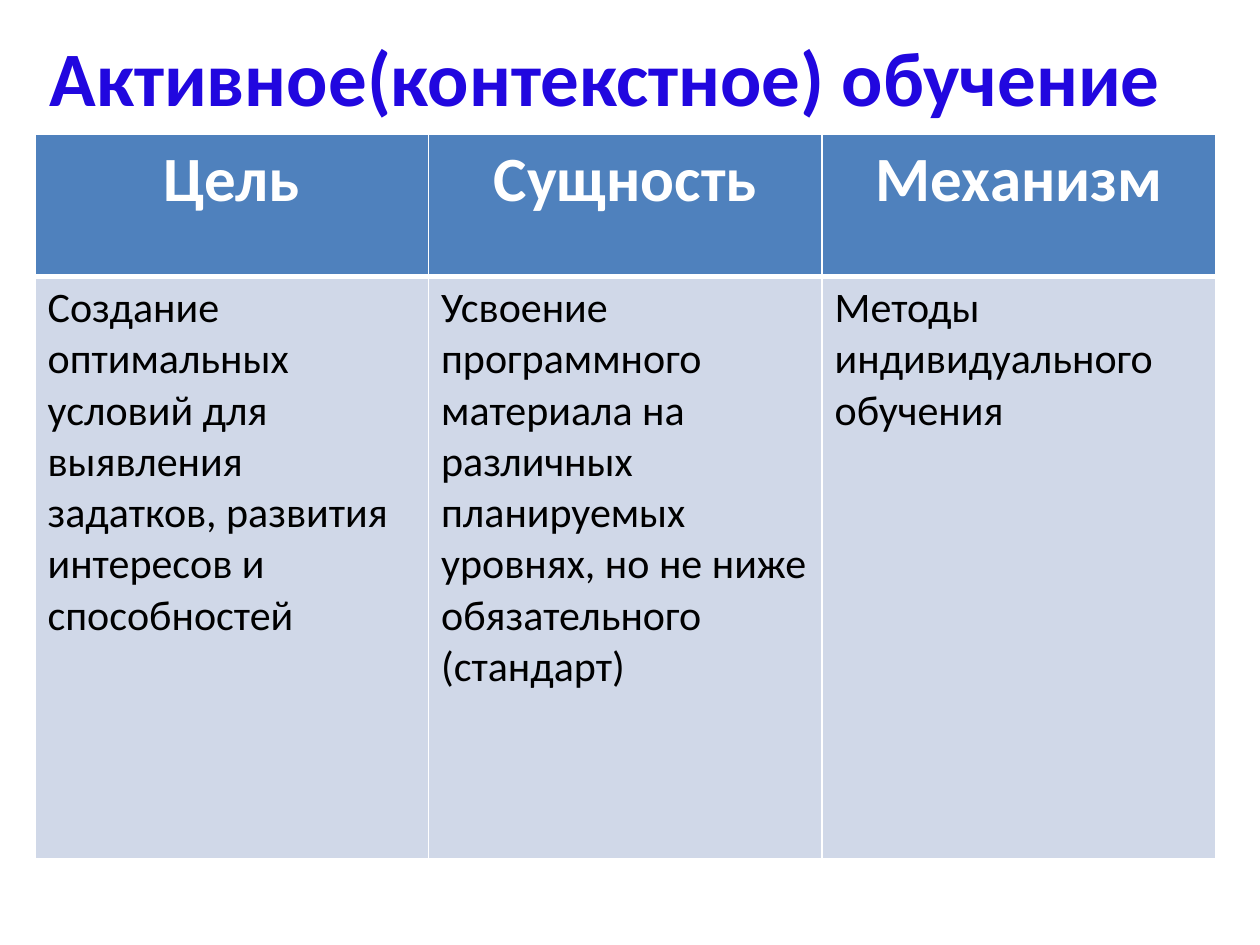
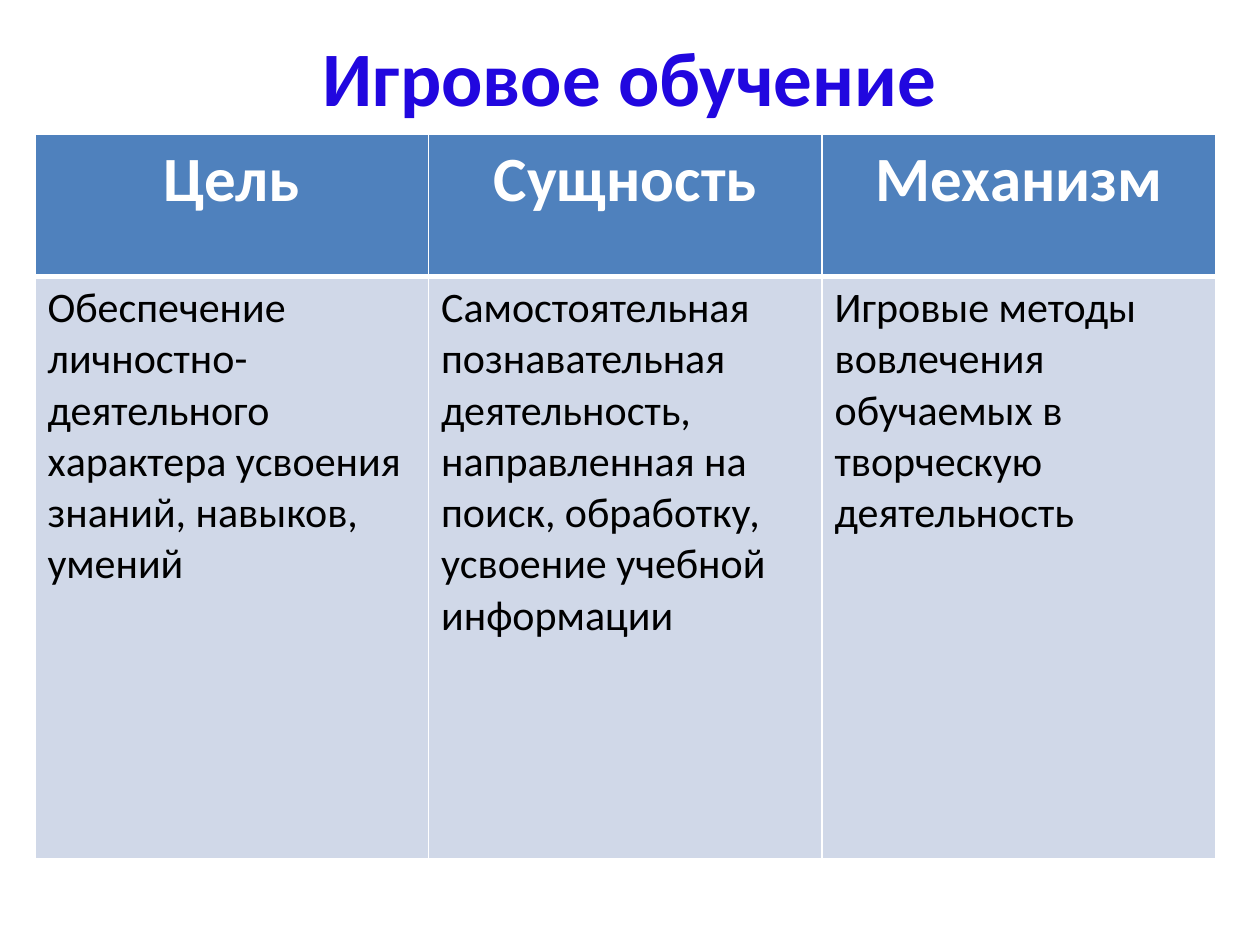
from dataclasses import dataclass

from lxml import etree
from pptx import Presentation
from pptx.dml.color import RGBColor
from pptx.enum.text import MSO_ANCHOR, PP_ALIGN
from pptx.oxml.ns import qn
from pptx.util import Pt

LEFT, CENTER = PP_ALIGN.LEFT, PP_ALIGN.CENTER
MIDDLE = MSO_ANCHOR.MIDDLE

# Content: title, left and width of the title box, body cells
HEADS = ["Цель", "Сущность", "Механизм"]
SLIDES = [
    ("Активное(контекстное) обучение", 8.5, 675, [
        "Создание оптимальных условий для выявления задатков, "
        "развития интересов и способностей",
        "Усвоение программного материала на различных планируемых "
        "уровнях, но не ниже обязательного (стандарт)",
        "Методы индивидуального обучения",
    ]),
    ("Игровое обучение", 36, 648, [
        "Обеспечение личностно-деятельного характера усвоения "
        "знаний, навыков, умений",
        "Самостоятельная познавательная деятельность, направленная "
        "на поиск, обработку, усвоение учебной информации",
        "Игровые методы вовлечения обучаемых в творческую деятельность",
    ]),
]


@dataclass(frozen=True)
class Theme:
    font: str = "Calibri"
    title: str = "2107DF"
    head: str = "4F81BD"
    body: str = "D0D8E8"
    white: str = "FFFFFF"
    black: str = "000000"
    title_size: int = 44
    head_size: int = 36
    body_size: int = 24
    thin: int = 1
    thick: int = 3


THEME = Theme()

# Layout in points
WIDE, HIGH = 720, 540
TITLE_TOP, TITLE_HIGH = 9.4, 67.5
GRID_LEFT, GRID_TOP = 20, 77
COL_WIDE = 224.9
ROW_HIGH = [81, 333]


def set_text(frame, text, size, color, bold, align):
    frame.text = text
    par = frame.paragraphs[0]
    par.alignment = align
    font = par.runs[0].font
    font.name, font.size, font.bold = THEME.font, Pt(size), bold
    font.color.rgb = RGBColor.from_string(color)


def set_edges(cell, top, bottom):
    props = cell._tc.get_or_add_tcPr()
    widths = {"a:lnL": THEME.thin, "a:lnR": THEME.thin,
              "a:lnT": top, "a:lnB": bottom}
    for tag, width in widths.items():
        line = etree.SubElement(props, qn(tag), w=str(Pt(width)))
        fill = etree.SubElement(line, qn("a:solidFill"))
        etree.SubElement(fill, qn("a:srgbClr"), val=THEME.white)


def add_title(slide, text, left, width):
    box = slide.shapes.add_textbox(
        Pt(left), Pt(TITLE_TOP), Pt(width), Pt(TITLE_HIGH))
    frame = box.text_frame
    frame.word_wrap = True
    frame.vertical_anchor = MIDDLE
    set_text(frame, text, THEME.title_size, THEME.title, True, CENTER)


def add_grid(slide, body):
    # Each row: texts, fill, type size, text colour, bold, align, edges
    rows = [
        (HEADS, THEME.head, THEME.head_size, THEME.white, True, CENTER,
         (THEME.thin, THEME.thick)),
        (body, THEME.body, THEME.body_size, THEME.black, False, LEFT,
         (THEME.thick, THEME.thin)),
    ]
    count = len(HEADS)
    table = slide.shapes.add_table(
        len(rows), count, Pt(GRID_LEFT), Pt(GRID_TOP),
        Pt(COL_WIDE * count), Pt(sum(ROW_HIGH))).table
    for col in table.columns:
        col.width = Pt(COL_WIDE)
    for r, (texts, fill, size, color, bold, align, edges) in enumerate(rows):
        table.rows[r].height = Pt(ROW_HIGH[r])
        for c, text in enumerate(texts):
            cell = table.cell(r, c)
            set_edges(cell, *edges)
            cell.fill.solid()
            cell.fill.fore_color.rgb = RGBColor.from_string(fill)
            set_text(cell.text_frame, text, size, color, bold, align)


def main():
    deck = Presentation()
    deck.slide_width, deck.slide_height = Pt(WIDE), Pt(HIGH)
    blank = deck.slide_layouts[6]
    for title, left, width, body in SLIDES:
        slide = deck.slides.add_slide(blank)
        add_title(slide, title, left, width)
        add_grid(slide, body)
    deck.save("out.pptx")


if __name__ == "__main__":
    main()
